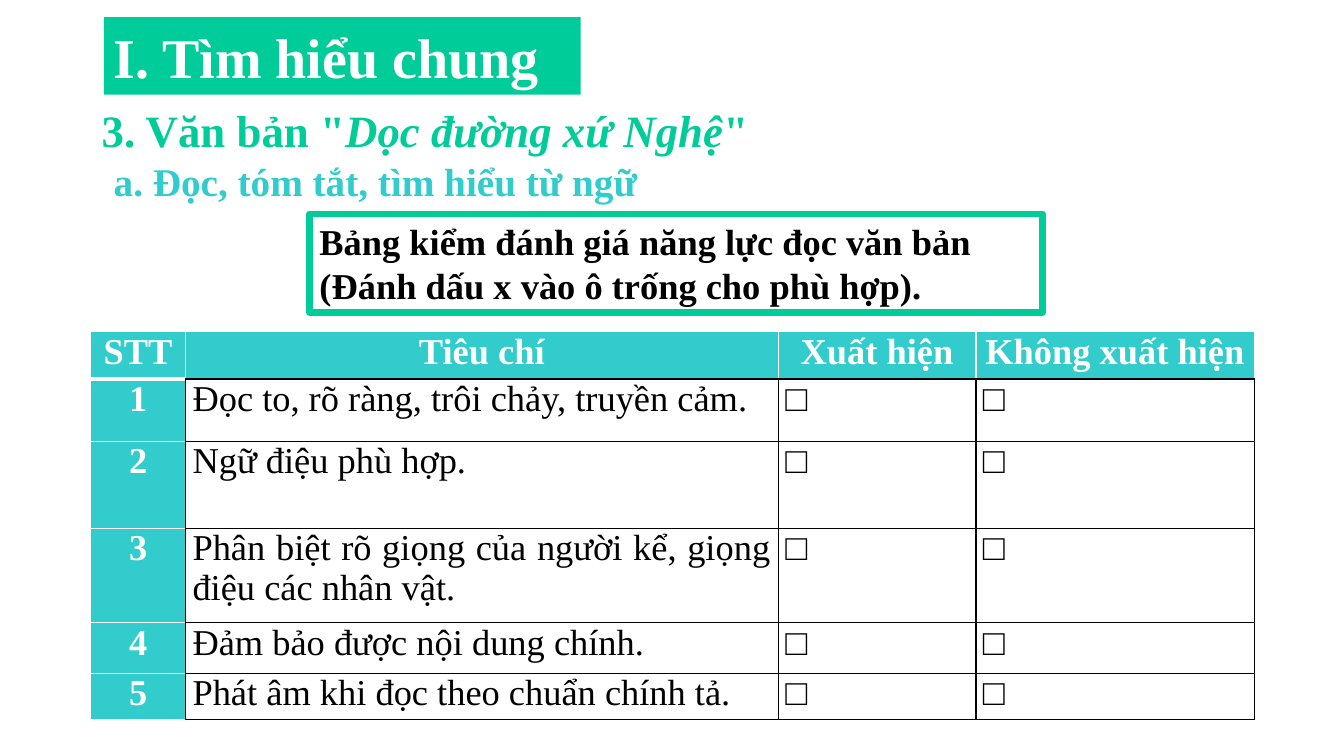
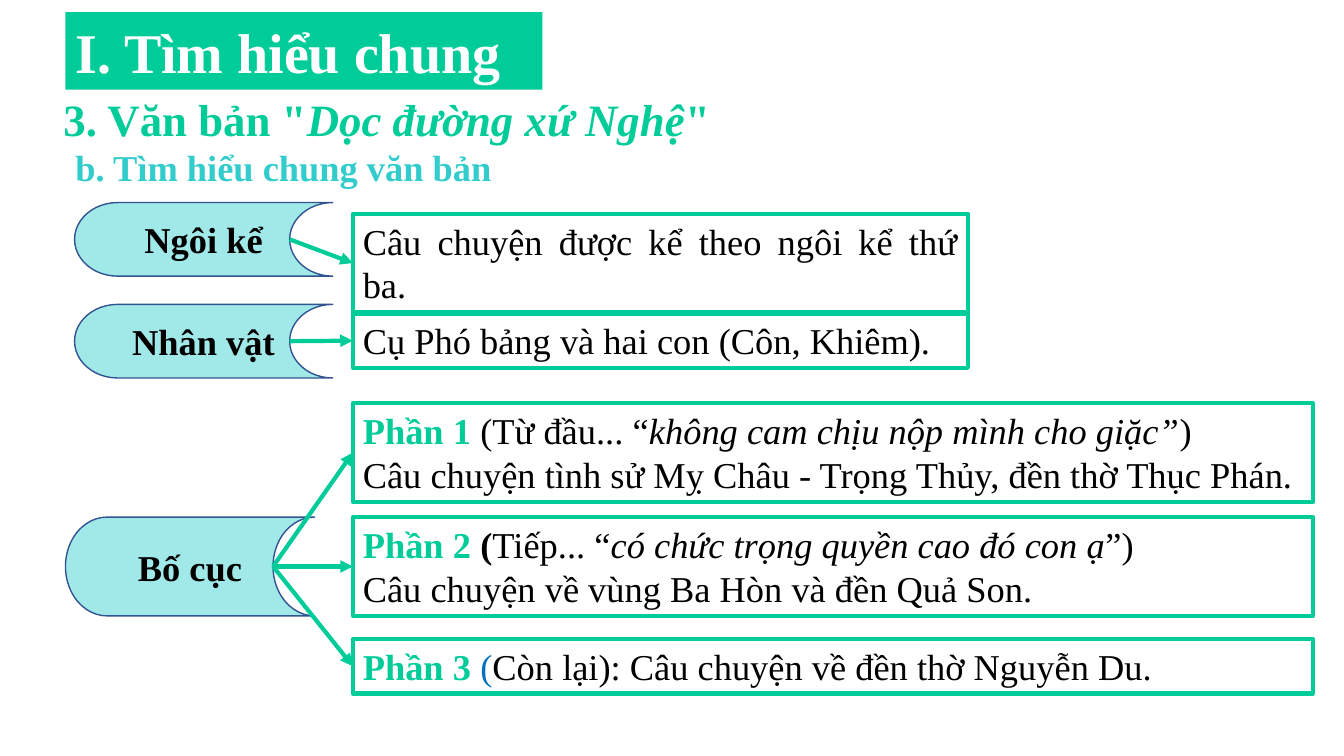
from dataclasses import dataclass

from lxml import etree
from pptx import Presentation
from pptx.dml.color import RGBColor
from pptx.enum.shapes import MSO_CONNECTOR, MSO_SHAPE
from pptx.enum.text import MSO_ANCHOR, MSO_AUTO_SIZE, PP_ALIGN
from pptx.oxml.ns import qn
from pptx.util import Inches, Pt

RECT = MSO_SHAPE.RECTANGLE
STORAGE = MSO_SHAPE.FLOWCHART_STORED_DATA
STRAIGHT = MSO_CONNECTOR.STRAIGHT
TOP, MIDDLE = MSO_ANCHOR.TOP, MSO_ANCHOR.MIDDLE
CENTER, JUSTIFY = PP_ALIGN.CENTER, PP_ALIGN.JUSTIFY
GROW, FIXED = MSO_AUTO_SIZE.SHAPE_TO_FIT_TEXT, MSO_AUTO_SIZE.NONE
LEFT_SIDE = 1


@dataclass(frozen=True)
class Theme:
    font: str = "Times New Roman"
    green: str = "00CC99"
    teal: str = "33CCCC"
    pale: str = "A1E8E8"
    navy: str = "325491"
    blue: str = "0070C0"
    black: str = "000000"
    white: str = "FFFFFF"
    title: int = 40
    heading: int = 32
    subheading: int = 28
    body: int = 26


T = Theme()


class Deck:
    def __init__(self):
        self.prs = Presentation()
        self.prs.slide_width, self.prs.slide_height = Inches(13.33), Inches(7.5)
        self.s = None

    def slide(self):
        self.s = self.prs.slides.add_slide(self.prs.slide_layouts[6])

    def set_text(self, tf, paragraphs, size=T.body, color=T.black, bold=False, align=JUSTIFY):
        """Each paragraph is a string or a list of (text, overrides) runs."""
        for i, content in enumerate(paragraphs):
            p = tf.paragraphs[0] if i == 0 else tf.add_paragraph()
            p.alignment = align
            runs = [(content, {})] if isinstance(content, str) else content
            for text, style in runs:
                r = p.add_run()
                r.text = text
                r.font.name, r.font.size = T.font, Pt(size)
                r.font.bold = style.get("bold", bold)
                r.font.italic = style.get("italic", False)
                r.font.color.rgb = RGBColor.from_string(style.get("color", color))

    def text(self, x, y, w, h, paragraphs, **style):
        sp = self.s.shapes.add_textbox(Inches(x), Inches(y), Inches(w), Inches(h))
        sp.text_frame.word_wrap = True
        sp.text_frame.auto_size = GROW
        self.set_text(sp.text_frame, paragraphs, **style)

    def shape(self, x, y, w, h, paragraphs, kind=RECT, fill=None, line=None,
              width=3, anchor=TOP, size_mode=GROW, **style):
        sp = self.s.shapes.add_shape(kind, Inches(x), Inches(y), Inches(w), Inches(h))
        sp.shadow.inherit = False
        if fill:
            sp.fill.solid()
            sp.fill.fore_color.rgb = RGBColor.from_string(fill)
        else:
            sp.fill.background()
        if line:
            sp.line.color.rgb = RGBColor.from_string(line)
            sp.line.width = Pt(width)
        else:
            sp.line.fill.background()
        tf = sp.text_frame
        tf.word_wrap, tf.auto_size, tf.vertical_anchor = True, size_mode, anchor
        self.set_text(tf, paragraphs, **style)
        return sp

    def headings(self, x, y, subheading, heading_gap, sub_gap, sub_size):
        self.text(x - 0.12, y + heading_gap, 7.41, 0.64,
                  [[('3. Văn bản "', {}), ("Dọc đường xứ Nghệ", {"italic": True}), ('"', {})]],
                  size=T.heading, color=T.green, bold=True)
        self.shape(x, y, 4.73, 0.77, ["I. Tìm hiểu chung"], fill=T.green,
                   size=T.title, color=T.white, bold=True)
        self.text(x, y + sub_gap, 6.67, 0.55, [subheading],
                  size=sub_size, color=T.teal, bold=True)

    def topic(self, x, y, w, h, label):
        return self.shape(x, y, w, h, [label], kind=STORAGE, fill=T.pale, line=T.navy,
                          width=1, anchor=MIDDLE, size_mode=FIXED, bold=True, align=CENTER)

    def detail(self, y, w, h, paragraphs):
        return self.shape(3.5, y, w, h, paragraphs, line=T.green)

    def arrow(self, topic, box):
        # The concave right edge of the topic shape sits at 5/6 of its width
        x, y = topic.left + topic.width * 5 // 6, topic.top + topic.height // 2
        c = self.s.shapes.add_connector(STRAIGHT, x, y, box.left, box.top + box.height // 2)
        c.end_connect(box, LEFT_SIDE)
        c.line.color.rgb = RGBColor.from_string(T.green)
        c.line.width = Pt(3)
        sp_pr = c._element.spPr
        etree.SubElement(sp_pr.find(qn("a:ln")), qn("a:tailEnd"), type="triangle")
        etree.SubElement(sp_pr, qn("a:effectLst"))

    def borders(self, cell, left, right, top, bottom):
        tc_pr = cell._tc.get_or_add_tcPr()
        for side, (color, width) in zip("LRTB", (left, right, top, bottom)):
            ln = etree.SubElement(tc_pr, qn("a:ln" + side), w=str(Pt(width)))
            fill = etree.SubElement(ln, qn("a:solidFill"))
            etree.SubElement(fill, qn("a:srgbClr"), val=color)

    def table(self, x, y, col_widths, row_heights, rows):
        frame = self.s.shapes.add_table(len(rows), len(col_widths), Inches(x), Inches(y),
                                        Inches(sum(col_widths)), Inches(sum(row_heights)))
        table = frame.table
        table.horz_banding = False
        for column, width in zip(table.columns, col_widths):
            column.width = Inches(width)
        for row, height in zip(table.rows, row_heights):
            row.height = Inches(height)
        white, black, thick = (T.white, 1), (T.black, 1), (T.white, 3)
        for i, values in enumerate(rows):
            for j, value in enumerate(values):
                cell = table.cell(i, j)
                cell.margin_left = cell.margin_right = Inches(0.07)
                cell.margin_top = cell.margin_bottom = 0
                if i == 0:
                    self.borders(cell, white, white, white, black if j else thick)
                elif j == 0:
                    self.borders(cell, white, black, thick if i == 1 else white, white)
                else:
                    self.borders(cell, black, black, black, black)
                if i == 0 or j == 0:
                    cell.fill.solid()
                    cell.fill.fore_color.rgb = RGBColor.from_string(T.teal)
                    self.set_text(cell.text_frame, [value], color=T.white, bold=True,
                                  align=CENTER)
                else:
                    cell.fill.background()
                    self.set_text(cell.text_frame, [value])


def reading_checklist(d):
    d.slide()
    d.headings(1.03, 0.17, "a. Đọc, tóm tắt, tìm hiểu từ ngữ", 0.8, 1.34, T.subheading)
    d.shape(3.07, 2.12, 7.27, 0.98,
            ["Bảng kiểm đánh giá năng lực đọc văn bản",
             "(Đánh dấu x vào ô trống cho phù hợp)."],
            line=T.green, width=4.5, anchor=MIDDLE, bold=True)
    criteria = ["Đọc to, rõ ràng, trôi chảy, truyền cảm.",
                "Ngữ điệu phù hợp.",
                "Phân biệt rõ giọng của người kể, giọng điệu các nhân vật.",
                "Đảm bảo được nội dung chính.",
                "Phát âm khi đọc theo chuẩn chính tả."]
    rows = [["STT", "Tiêu chí", "Xuất hiện", "Không xuất hiện"]]
    rows += [[str(n), text, "□", "□"] for n, text in enumerate(criteria, 1)]
    d.table(0.9, 3.29, [0.94, 5.88, 1.96, 2.76], [0.47, 0.62, 0.86, 0.94, 0.5, 0.46], rows)


def text_overview(d):
    d.slide()
    d.headings(0.65, 0.12, "b. Tìm hiểu chung văn bản", 0.74, 1.27, T.body)

    # Topics on the left
    narrator = d.topic(0.74, 2.01, 2.56, 0.73, "Ngôi kể")
    characters = d.topic(0.74, 3.02, 2.56, 0.73, "Nhân vật")
    layout = d.topic(0.65, 5.13, 2.47, 0.98, "Bố cục")

    # Details on the right
    part = {"color": T.green, "bold": True}
    italic = {"italic": True}
    links = [
        (narrator, d.detail(2.12, 6.1, 0.98, ["Câu chuyện được kể theo ngôi kể thứ ba."])),
        (characters, d.detail(3.11, 6.1, 0.54, ["Cụ Phó bảng và hai con (Côn, Khiêm)."])),
        (layout, d.detail(4, 9.52, 0.98, [
            [("Phần 1 ", part), ("(Từ đầu... “", {}),
             ("không cam chịu nộp mình cho giặc”", italic), (")", {})],
            "Câu chuyện tình sử Mỵ Châu - Trọng Thủy, đền thờ Thục Phán."])),
        (layout, d.detail(5.13, 9.52, 0.98, [
            [("Phần 2 ", part), ("(", {"bold": True}), ("Tiếp... “", {}),
             ("có chức trọng quyền cao đó con ạ", italic), ("”)", {})],
            "Câu chuyện về vùng Ba Hòn và đền Quả Son."])),
        (layout, d.detail(6.34, 9.52, 0.54, [
            [("Phần 3 ", part), ("(", {"color": T.blue}),
             ("Còn lại): Câu chuyện về đền thờ Nguyễn Du.", {})]])),
    ]

    # Arrows from topics to details
    for topic, box in links:
        d.arrow(topic, box)


def main():
    d = Deck()
    reading_checklist(d)
    text_overview(d)
    d.prs.save("out.pptx")


if __name__ == "__main__":
    main()
